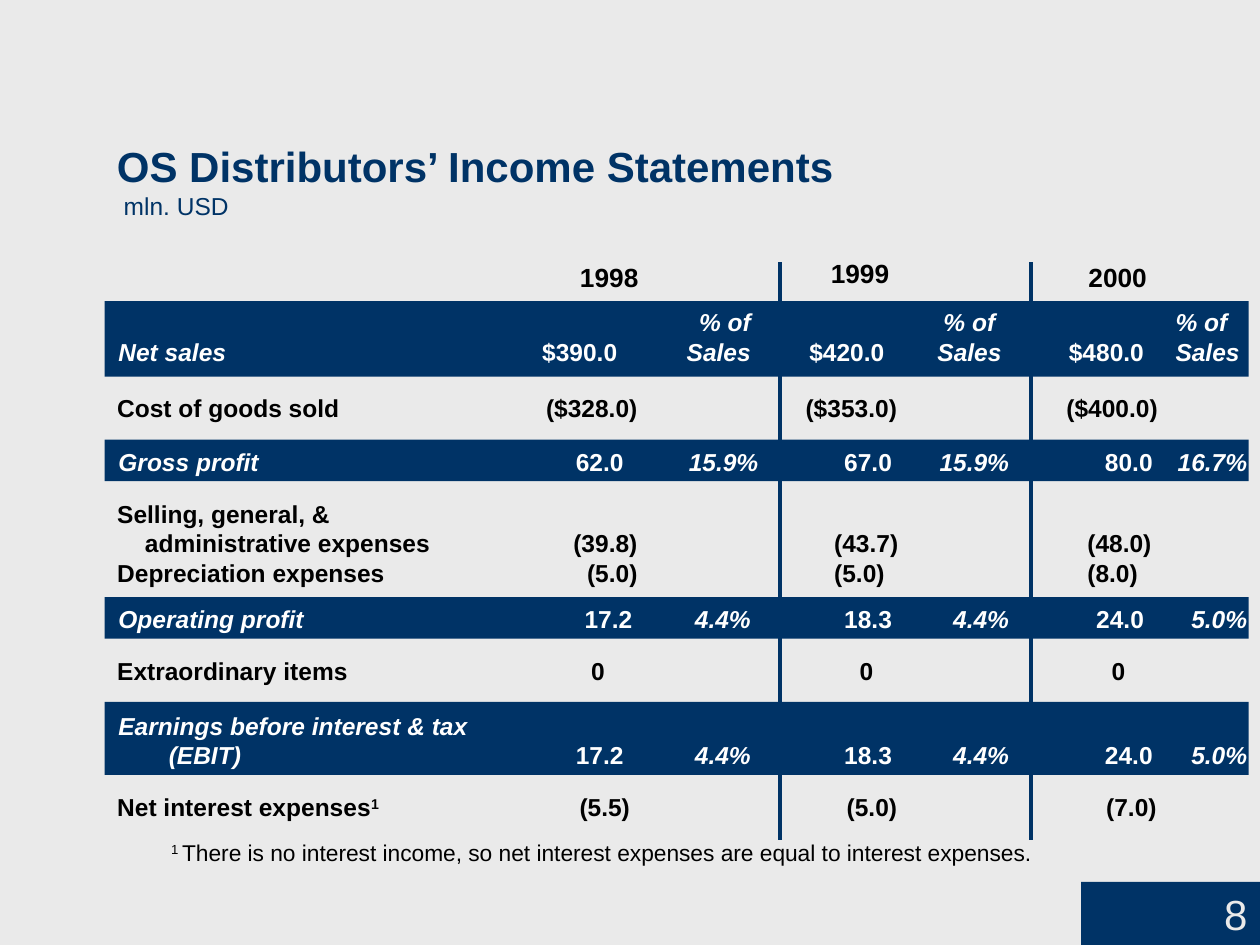
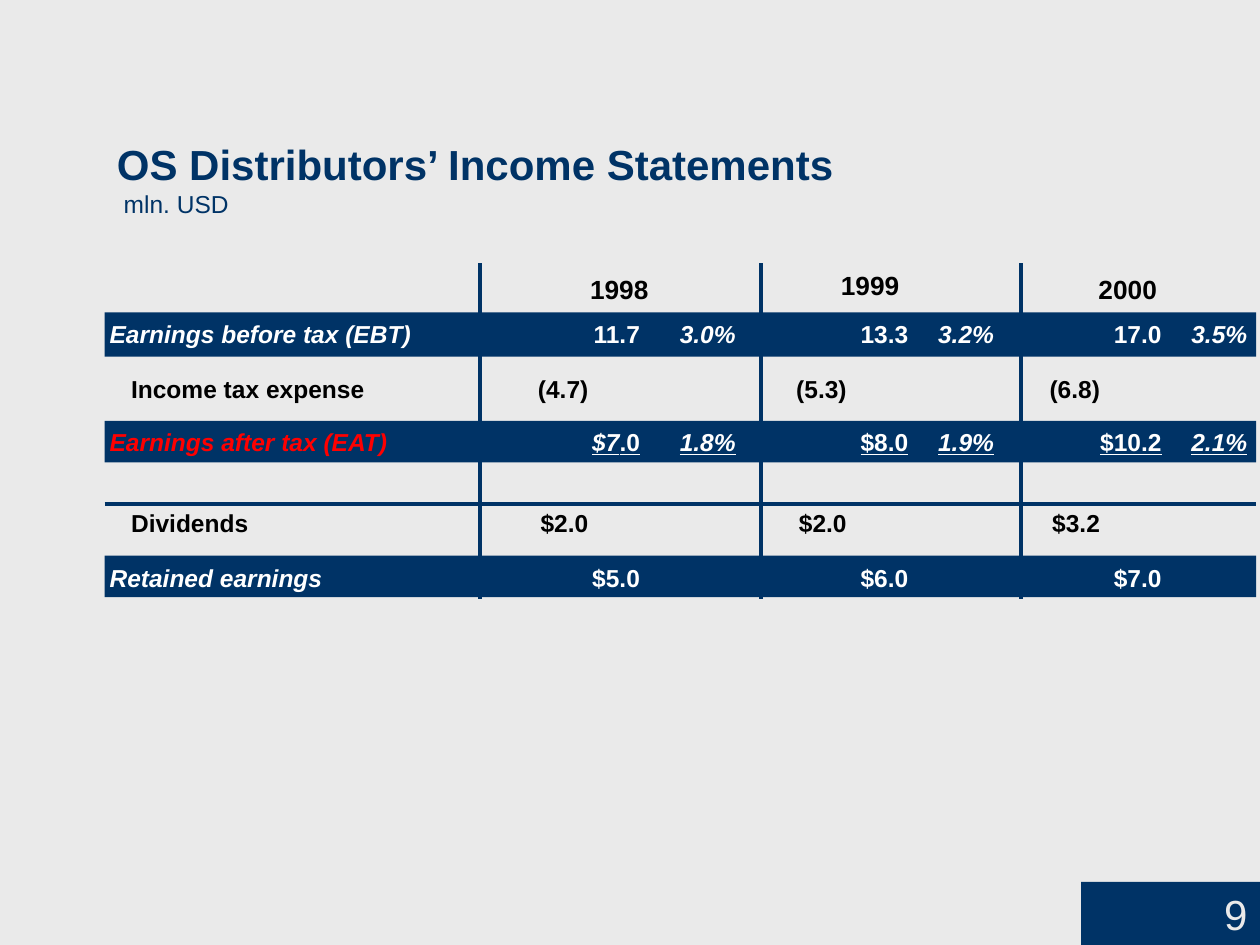
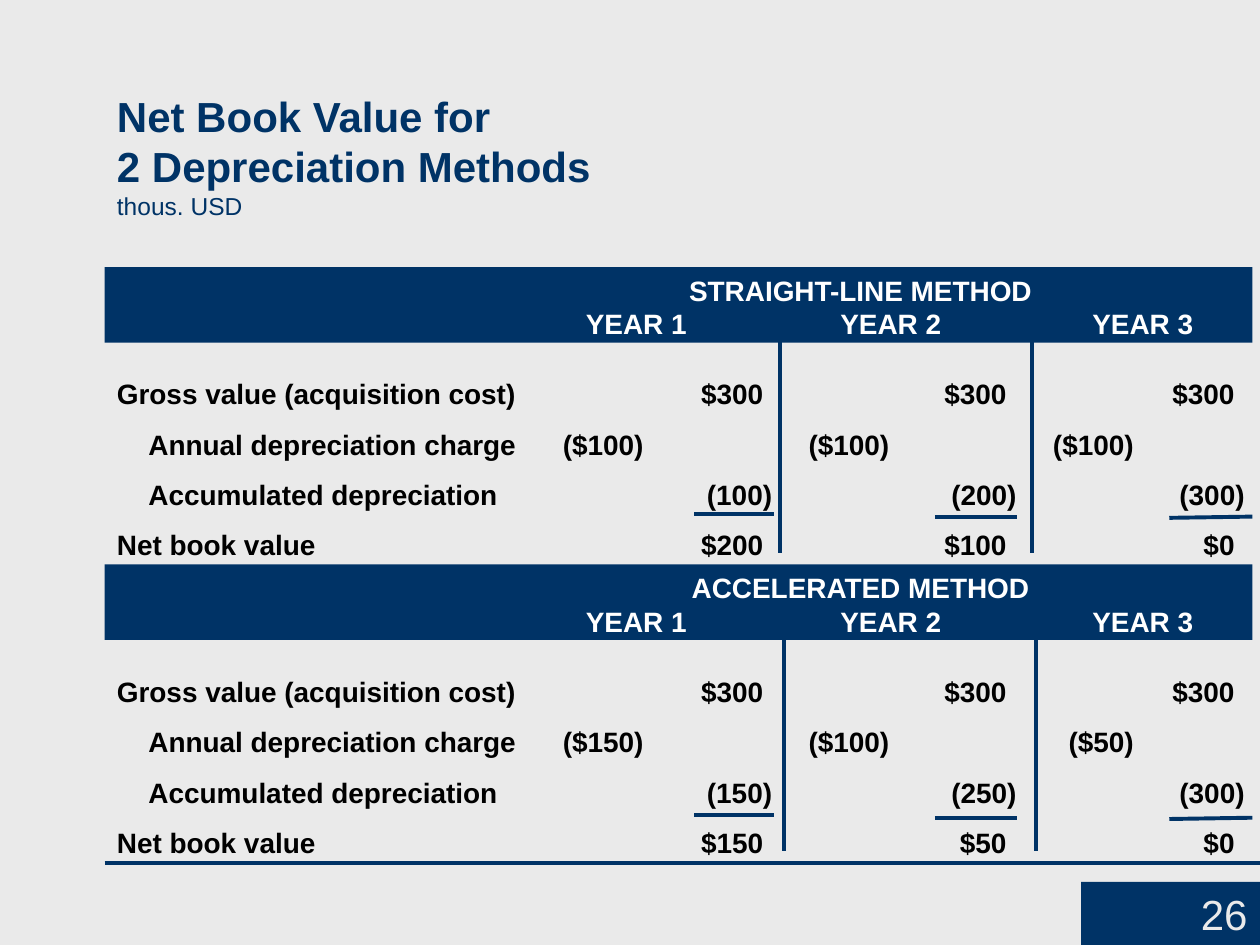
from lxml.etree import SubElement
from pptx import Presentation
from pptx.dml.color import RGBColor
from pptx.enum.shapes import MSO_CONNECTOR, MSO_SHAPE
from pptx.enum.text import MSO_ANCHOR, PP_ALIGN
from pptx.oxml.ns import qn
from pptx.util import Inches, Pt

NAVY = RGBColor(0x00, 0x33, 0x66)
PALE = RGBColor(0xEA, 0xEA, 0xEA)
WHITE = RGBColor(0xFF, 0xFF, 0xFF)
BLACK = RGBColor(0x00, 0x00, 0x00)
RED = RGBColor(0xFF, 0x00, 0x00)

COLUMNS, ROWS = 10, 7.5
EDGE = 0.83
TABLE_INSET = 0.35

TITLE = {"size": Pt(24), "bold": True, "color": NAVY}
UNIT = {"size": Pt(14), "color": NAVY}
NUMBER = {"size": Pt(24), "color": PALE}
YEAR = {"size": Pt(15), "bold": True, "color": BLACK}
ITEM = {"size": Pt(14), "bold": True, "color": BLACK}
FIGURE = ITEM | {"color": WHITE}
SHARE = FIGURE | {"italic": True}
NOTE = {"size": Pt(13), "color": BLACK}
METHOD = {"size": Pt(16), "bold": True, "color": WHITE}
VALUE = METHOD | {"color": BLACK}
RAISED = {"baseline": "30000"}
UNDERLINED = {"underline": True}


def right(*positions):
    return [(position, "r") for position in positions]


def left(*positions):
    return [(position, "l") for position in positions]


def center(*positions):
    return [(position, "ctr") for position in positions]


def plain(text, style):
    return [(text, style)]


def cells(label, figures, style):
    return plain("\t".join([label, *figures]), style)


def band_cells(label, figures, label_style=SHARE, extra=None):
    spans = [(label, label_style)]
    for index, figure in enumerate(figures):
        style = SHARE if index % 2 else FIGURE
        spans += [("\t", FIGURE), (figure, style | (extra or {}))]
    return spans


class Board:
    def __init__(self):
        self.deck = Presentation()
        self.deck.slide_width = Inches(10)
        self.deck.slide_height = Inches(7.5)
        self.page = None

    def across(self, columns):
        return round(self.deck.slide_width * columns / COLUMNS)

    def down(self, rows):
        return round(self.deck.slide_height * rows / ROWS)

    def place(self, x, y, width, height):
        return self.across(x), self.down(y), self.across(width), self.down(height)

    def new_page(self, number):
        self.page = self.deck.slides.add_slide(self.deck.slide_layouts[6])
        self.page.background.fill.solid()
        self.page.background.fill.fore_color.rgb = PALE
        box = self.band(7, 0.5, x=8.58, width=1.42)
        box.text_frame.vertical_anchor = MSO_ANCHOR.BOTTOM
        para = box.text_frame.paragraphs[0]
        para.alignment = PP_ALIGN.RIGHT
        self.add_spans(para, plain(number, NUMBER))

    def band(self, y, height, x=EDGE, width=9.08):
        box = self.page.shapes.add_shape(
            MSO_SHAPE.RECTANGLE, *self.place(x, y, width, height))
        box.shadow.inherit = False
        box.fill.solid()
        box.fill.fore_color.rgb = NAVY
        box.line.fill.background()
        return box

    def line(self, x1, y1, x2, y2):
        rule = self.page.shapes.add_connector(
            MSO_CONNECTOR.STRAIGHT, self.across(x1), self.down(y1),
            self.across(x2), self.down(y2))
        rule.line.color.rgb = NAVY
        rule.line.width = Pt(2.25)
        SubElement(rule._element.spPr, qn("a:effectLst"))

    def add_spans(self, para, spans):
        for text, style in spans:
            span = para.add_run()
            span.text = text
            span.font.name = "Arial"
            for name, value in style.items():
                if name == "color":
                    span.font.color.rgb = value
                elif name == "baseline":
                    span._r.get_or_add_rPr().set(name, value)
                else:
                    setattr(span.font, name, value)

    def text(self, place, lines, inset=0.1, top_inset=0.05, stops=(),
             align=None, anchor=MSO_ANCHOR.TOP, spacing=None):
        box = self.page.shapes.add_textbox(*self.place(*place))
        frame = box.text_frame
        layout = {"word_wrap": True, "vertical_anchor": anchor,
                  "margin_left": self.across(inset), "margin_right": 0,
                  "margin_top": self.down(top_inset),
                  "margin_bottom": self.down(top_inset)}
        for name, value in layout.items():
            setattr(frame, name, value)
        start = place[0] + inset
        for index, spans in enumerate(lines):
            para = frame.add_paragraph() if index else frame.paragraphs[0]
            if stops:
                tabs = SubElement(para._p.get_or_add_pPr(), qn("a:tabLst"))
                for position, kind in stops[index]:
                    SubElement(tabs, qn("a:tab"), algn=kind,
                               pos=str(self.across(position - start)))
            for name, value in {"alignment": align, "line_spacing": spacing}.items():
                if value is not None:
                    setattr(para, name, value)
            self.add_spans(para, spans)

    def title(self, headings, unit, bottom=1.8):
        height = 0.34 + 0.4 * len(headings)
        lines = [plain(heading, TITLE) for heading in headings]
        self.text((EDGE, bottom - height, 8.93, height),
                  lines + [plain(unit, UNIT)], anchor=MSO_ANCHOR.BOTTOM)

    def years(self, y, shift=0):
        for name, x, rise, width in (("1998", 4, 0, 1.67), ("1999", 5.95, 0.03, 1.75),
                                     ("2000", 7.83, 0, 2.08)):
            self.text((x + shift, y - rise, width, 0.25), [plain(name, YEAR)],
                      inset=0, top_inset=0, align=PP_ALIGN.CENTER)

    def band_text(self, x, y, lines, stops, inset, height=0.25):
        self.text((x, y, COLUMNS - x, height), lines, inset=inset,
                  top_inset=0, stops=stops)

    def items(self, x, y, lines, stops, height=0.33):
        self.text((x, y, COLUMNS - x, height), lines, inset=TABLE_INSET, stops=stops)


def income_page(board):
    board.new_page("8")
    for y, height in ((2.39, 0.6), (3.49, 0.33), (4.74, 0.33), (5.57, 0.58)):
        board.band(y, height)
    for x in (6.19, 8.18):
        board.line(x, 2.08, x, 6.67)
    board.title(["OS Distributors’ Income Statements"], " mln. USD")
    board.years(2.07)

    sales = ["$390.0", "Sales", "$420.0", "Sales", "$480.0", "Sales"]
    operating = ["17.2", "4.4%", "18.3", "4.4%", "24.0", "5.0%"]
    gross = ["62.0", "15.9%", "67.0", "15.9%", "80.0", "16.7%"]
    ebit_stops = right(4.95, 5.96, 7.08, 8.01, 9.15, 9.9)
    bands = (
        (2.44, [cells("", ["% of"] * 3, SHARE), band_cells("Net sales", sales)],
         [right(5.96, 7.9) + left(9.33),
          right(4.9, 5.96, 7.02, 7.95, 9.08) + left(9.33)]),
        (3.55, [band_cells("Gross profit", gross)],
         [right(4.95, 6.02, 7.08, 8.01, 9.15, 9.9)]),
        (4.79, [band_cells("Operating profit", operating)],
         [right(5.02, 5.96, 7.08, 8.01, 9.08, 9.9)]),
        (5.64, [plain("Earnings before interest & tax", SHARE),
                band_cells("\t(EBIT)", operating)],
         [[], left(1.34) + ebit_stops]),
    )
    for y, lines, stops in bands:
        board.band_text(EDGE, y, lines, stops, 0.11, 0.24 * len(lines))

    expense_stops = right(5.06) + left(6.62, 8.63)
    items = (
        (3.07, [cells("Cost of goods sold", ["($328.0)", "($353.0)", "($400.0)"], ITEM)],
         [right(5.06, 7.12, 9.19)]),
        (3.91, [plain("Selling, general, &", ITEM),
                cells("\tadministrative expenses", ["(39.8)", "(43.7)", "(48.0)"], ITEM),
                cells("Depreciation expenses", ["(5.0)", "(5.0)", "(8.0)"], ITEM)],
         [[], left(1.15) + expense_stops, expense_stops]),
        (5.16, [cells("Extraordinary items", ["0"] * 3, ITEM)],
         [right(4.8, 6.93, 8.93)]),
        (6.24, [plain("Net interest expenses", ITEM) + plain("1", ITEM | RAISED)
                + cells("", ["(5.5)", "(5.0)", "(7.0)"], ITEM)],
         [right(5, 7.12, 9.18)]),
    )
    for y, lines, stops in items:
        board.items(0.58, y, lines, stops, 0.1 + 0.23 * len(lines))
    note = ("There is no interest income, so net interest expenses "
            "are equal to interest expenses.")
    board.text((1.26, 6.61, 8.74, 0.32), [[("1 ", NOTE | RAISED), (note, NOTE)]])


def earnings_page(board):
    board.new_page("9")
    for y, height in ((2.48, 0.35), (3.34, 0.33), (4.41, 0.33)):
        board.band(y, height, width=9.14)
    for x in (3.81, 6.04, 8.1):
        board.line(x, 2.09, x, 4.75)
    board.line(EDGE, 4, 9.97, 4)
    board.title(["OS Distributors’ Income Statements"], " mln. USD", bottom=1.78)
    board.years(2.17, shift=0.08)

    before_tax = band_cells("Earnings before tax (EBT)",
                            ["11.7", "3.0%", "13.3", "3.2%", "17.0", "3.5%"])
    after_tax = band_cells("Earnings after tax (EAT)",
                           ["$7.0", "1.8%", "$8.0", "1.9%", "$10.2", "2.1%"],
                           SHARE | {"color": RED}, UNDERLINED)
    after_tax[2:3] = [("$7", SHARE | UNDERLINED), (".0", FIGURE | UNDERLINED)]
    retained = [("Retained earnings", SHARE)] + cells("", ["$5.0", "$6.0", "$7.0"], FIGURE)
    shared = right(5.08, 5.84, 7.21, 7.89, 9.22, 9.9)
    for y, spans, stops in ((2.53, before_tax, shared), (3.39, after_tax, shared),
                            (4.47, retained, shared[::2])):
        board.band_text(0.71, y, [spans], [stops], 0.16)
    for y, label, figures in (
            (2.92, "Income tax expense", ["(4.7)", "(5.3)", "(6.8)"]),
            (3.98, "Dividends", ["$2.0", "$2.0", "$3.2"])):
        board.items(0.69, y, [cells(label, figures, ITEM)], [right(4.67, 6.72, 8.73)])


def depreciation_page(board):
    board.new_page("26")
    board.title(["Net Book Value for", "2 Depreciation Methods"], "thous. USD")
    methods = (
        (2.12, "STRAIGHT-LINE METHOD", 6.19, ["($100)", "($100)", "($100)"],
         ["(100)", "(200)", "(300)"], ["$200", "$100", "$0"], 4.08),
        (4.48, "ACCELERATED METHOD", 6.22, ["($150)", "($100)", "($50)"],
         ["(150)", "(250)", "(300)"], ["$150", "$50", "$0"], 6.47),
    )
    totals = right(6.06, 7.99, 9.8)
    stops = [totals, left(1.18) + right(5.11, 7.06, 9),
             left(1.18) + right(6.13, 8.07, 9.88), totals]
    for y, method, divider, charges, accumulated, net, rule in methods:
        board.band(y, 0.6, width=9.11)
        board.band_text(0.61, y + 0.05,
                        [plain("\t" + method, METHOD),
                         cells("", ["YEAR 1", "YEAR 2", "YEAR 3"], METHOD)],
                        [center(6.83), center(5.05, 7.07, 9.07)], 0, 0.53)
        for x in (divider, divider + 2):
            board.line(x, y + 0.35, x, y + 2.27)
        lines = [cells("Gross value (acquisition cost)", ["$300"] * 3, VALUE),
                 cells("\tAnnual depreciation charge", charges, VALUE),
                 cells("\tAccumulated depreciation", accumulated, VALUE),
                 cells("Net book value", net, VALUE)]
        board.text((EDGE, y + 0.69, COLUMNS - EDGE, 1.7), lines, stops=stops, spacing=1.5)
        for x1, x2, drop, rise in ((5.51, 6.14, 0, 0), (7.42, 8.07, 0.02, 0),
                                   (9.28, 9.94, 0.03, 0.01)):
            board.line(x1, rule + drop, x2, rule + drop - rise)
    board.line(EDGE, 6.85, COLUMNS, 6.85)


def main():
    board = Board()
    for build in (income_page, earnings_page, depreciation_page):
        build(board)
    board.deck.save("out.pptx")


if __name__ == "__main__":
    main()
